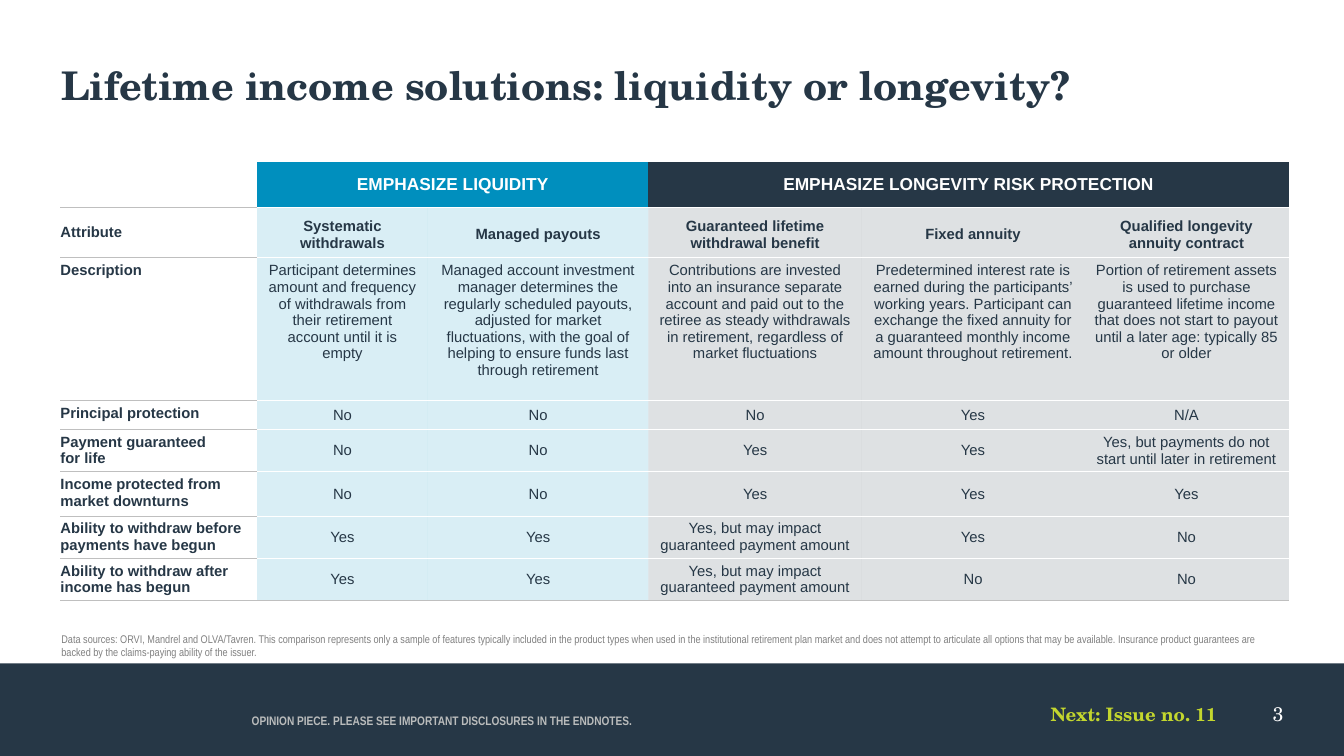
from dataclasses import dataclass
from lxml.etree import SubElement
from pptx import Presentation
from pptx.dml.color import RGBColor as Rgb
from pptx.enum.shapes import MSO_SHAPE as Shape
from pptx.enum.text import MSO_ANCHOR as Anchor, MSO_AUTO_SIZE as Auto, PP_ALIGN as Align
from pptx.oxml.ns import qn
from pptx.util import Inches, Pt


@dataclass(frozen=True)
class Theme:
    navy: str = "263746"
    blue: str = "008FBE"
    lime: str = "C3D62E"
    white: str = "FFFFFF"
    rule: str = "BFBFBF"
    pale: str = "BABCBC"
    gray: str = "808080"
    serif: str = "TeX Gyre Schola"
    sans: str = "Arial"
    slim: str = "Arial Narrow"
    title: int = 32
    page: int = 16
    next: int = 15
    head: int = 14
    cell: int = 12
    small: int = 10
    note: int = 9


theme = Theme()
deck = Presentation()
deck.slide_width, deck.slide_height = Inches(15.11), Inches(8.5)
wide, high = deck.slide_width / 100, deck.slide_height / 100  # one percent
slide = deck.slides.add_slide(deck.slide_layouts[1])
shapes = slide.shapes


def style(frame, text, face, size, color, bold=False, align=Align.LEFT):
    frame.text = text
    frame.word_wrap = True
    for para in frame.paragraphs:
        para.alignment = align
        for run in para.runs:
            font = run.font
            font.name, font.size, font.bold = face, Pt(size), bold
            font.color.rgb = Rgb.from_string(color)


def edge(cell, top, base):
    """Rule a cell above and below, with open sides."""
    props = cell._tc.get_or_add_tcPr()
    for tag, color in (("lnL", None), ("lnR", None), ("lnT", top), ("lnB", base)):
        line = SubElement(props, qn("a:" + tag), w=str(Pt(1)))
        fill = SubElement(line, qn("a:solidFill" if color else "a:noFill"))
        if color:
            SubElement(fill, qn("a:srgbClr"), val=color)


# Footer band
left, right = 4.57, 95.5
band = shapes.add_shape(Shape.RECTANGLE, 0, int(87.76 * high),
                        deck.slide_width, int(12.24 * high))
band.shadow.inherit = False
band.fill.solid()
band.fill.fore_color.rgb = Rgb.from_string(theme.navy)
band.line.fill.background()

# Title, note and footer texts; places are percents of the slide
title, note = shapes.title, slide.placeholders[1]
page, issue, notice = (shapes.add_textbox(0, 0, 0, 0) for _ in range(3))
texts = [
    (title, (left, 8.12, right - left, 13.29), Anchor.TOP,
     "Lifetime income solutions: liquidity or longevity?",
     theme.serif, theme.title, theme.navy, True, Align.LEFT),
    (note, (left, 82.35, right - left, 4.82), Anchor.BOTTOM,
     "Data sources: ORVI, Mandrel and OLVA/Tavren. This comparison represents only a sample of "
     "features typically included in the product types when used in the institutional retirement "
     "plan market and does not attempt to articulate all options that may be available. Insurance "
     "product guarantees are backed by the claims-paying ability of the issuer.",
     theme.slim, theme.note, theme.gray, False, Align.LEFT),
    (notice, (18.73, 91.29, 29.78, 4.94), Anchor.BOTTOM,
     "OPINION PIECE. PLEASE SEE IMPORTANT DISCLOSURES IN THE ENDNOTES.",
     theme.slim, theme.small, theme.pale, True, Align.LEFT),
    (issue, (49.64, 92.94, 40.9, 4.94), Anchor.TOP, "Next: Issue no. 11",
     theme.serif, theme.next, theme.lime, True, Align.RIGHT),
    (page, (92.85, 92.82, 2.65, 3.88), Anchor.TOP, "3",
     theme.serif, theme.page, theme.white, False, Align.RIGHT),
]
for box, (x, y, w, h), anchor, *look in texts:
    box.left, box.top = int(x * wide), int(y * high)
    box.width, box.height = int(w * wide), int(h * high)
    frame = box.text_frame
    frame.margin_left = frame.margin_right = frame.margin_top = frame.margin_bottom = 0
    frame.auto_size, frame.vertical_anchor = Auto.NONE, anchor
    style(frame, *look)

para = note.text_frame.paragraphs[0]
para.space_before = Pt(0)
props = para._p.get_or_add_pPr()
props.set("marL", "0")
props.set("indent", "0")
SubElement(props, qn("a:buNone"))

# Comparison table
rows = [
    ["", "EMPHASIZE LIQUIDITY", "", "EMPHASIZE LONGEVITY RISK PROTECTION", "", ""],
    ["Attribute", "Systematic withdrawals", "Managed payouts",
     "Guaranteed lifetime withdrawal benefit", "Fixed annuity",
     "Qualified longevity annuity contract"],
    ["Description",
     "Participant determines amount and frequency of withdrawals from their retirement account "
     "until it is empty",
     "Managed account investment manager determines the regularly scheduled payouts, adjusted for "
     "market fluctuations, with the goal of helping to ensure funds last through retirement",
     "Contributions are invested into an insurance separate account and paid out to the retiree as "
     "steady withdrawals in retirement, regardless of market fluctuations",
     "Predetermined interest rate is earned during the participants’ working years. Participant "
     "can exchange the fixed annuity for a guaranteed monthly income amount throughout retirement.",
     "Portion of retirement assets is used to purchase guaranteed lifetime income that does not "
     "start to payout until a later age: typically 85 or older"],
    ["Principal protection", "No", "No", "No", "Yes", "N/A"],
    ["Payment guaranteed \vfor life", "No", "No", "Yes", "Yes",
     "Yes, but payments do not start until later in retirement"],
    ["Income protected from market downturns", "No", "No", "Yes", "Yes", "Yes"],
    ["Ability to withdraw before payments have begun", "Yes", "Yes",
     "Yes, but may impact guaranteed payment amount", "Yes", "No"],
    ["Ability to withdraw after income has begun", "Yes", "Yes",
     "Yes, but may impact guaranteed payment amount", "No", "No"],
]
widths = [14.63, 12.71, 16.41, 15.88, 16.55, 15.22]
heights = [6, 6.71, 18.82, 3.88, 5.55, 5.88, 5.55, 5.55]
table = shapes.add_table(len(rows), len(widths), int(4.5 * wide), int(21.41 * high),
                         int(sum(widths) * wide), int(sum(heights) * high)).table
table.first_row = table.horz_banding = False
for col, w in zip(table.columns, widths):
    col.width = int(w * wide)
for row, h in zip(table.rows, heights):
    row.height = int(h * high)

last = len(rows) - 1
for r, row in enumerate(rows):
    for c, text in enumerate(row):
        cell = table.cell(r, c)
        label, top = c == 0, r == 0
        edge(cell, theme.rule if label and not top else theme.white,
             theme.rule if label or r == last else theme.white)
        if label:
            cell.fill.background()
            cell.margin_left = cell.margin_right = 0
        else:
            cell.fill.solid()
            cell.fill.fore_color.rgb = Rgb.from_string(theme.blue if c < 3 else theme.navy)
            if not top:
                tint = cell._tc.tcPr.find(qn("a:solidFill")).find(qn("a:srgbClr"))
                SubElement(tint, qn("a:alpha"), val="15000")
            if r == 1:
                cell.margin_bottom = 0
        middle = r < 2 or (not label and r > 2)
        cell.vertical_anchor = Anchor.MIDDLE if middle else Anchor.TOP
        style(cell.text_frame, text, theme.sans, theme.head if top else theme.cell,
              theme.white if top else theme.navy, label or r < 2,
              Align.LEFT if label else Align.CENTER)

for first, end in ((1, 2), (3, 5)):
    table.cell(0, first).merge(table.cell(0, end))

deck.save("out.pptx")
